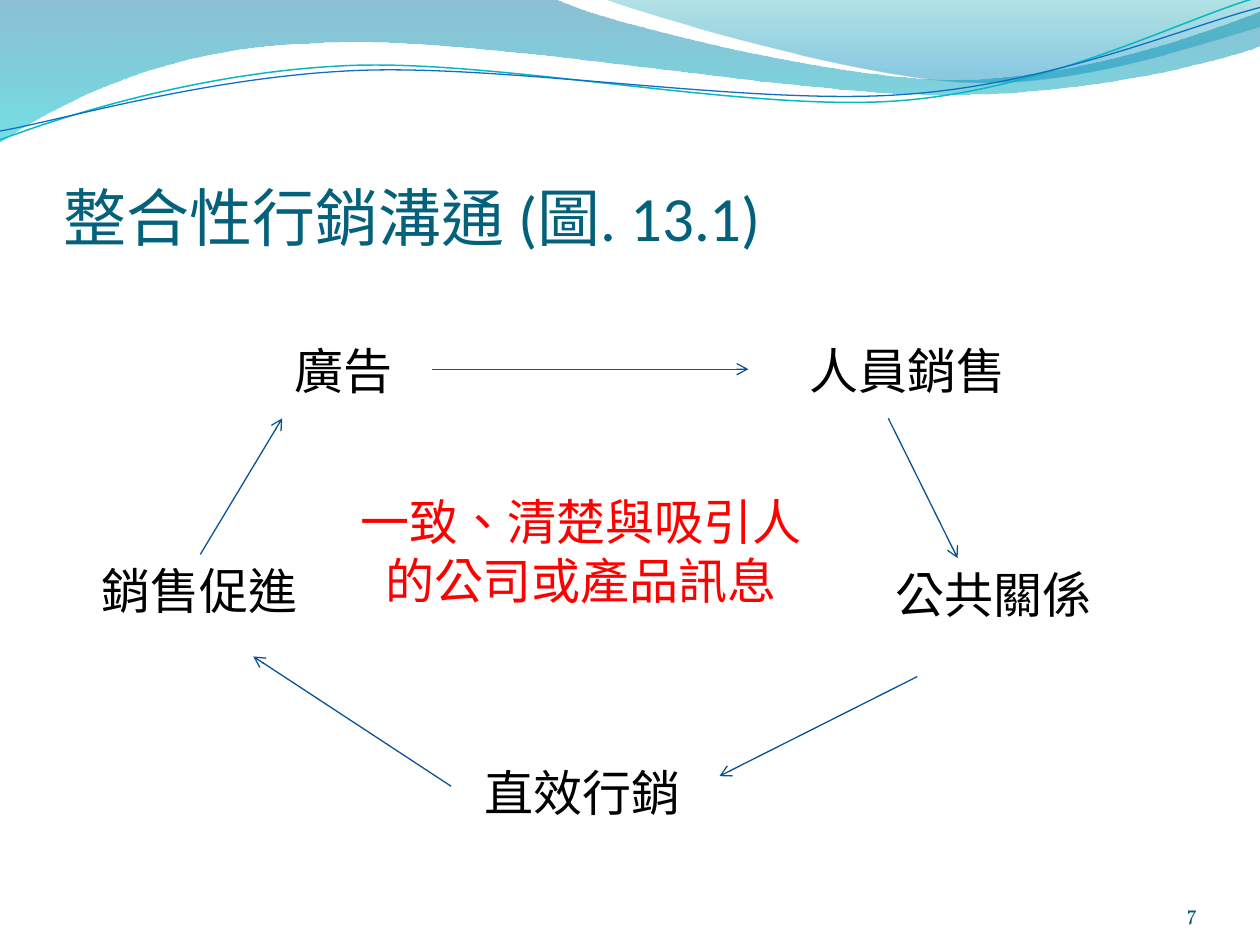
"""Build the integrated marketing communication cycle slide."""
import math
from dataclasses import dataclass
from typing import Optional

import pptx
import pptx.dml.color
import pptx.enum.lang
import pptx.enum.shapes
import pptx.enum.text
import pptx.oxml.ns
import pptx.util

Inches = pptx.util.Inches
Pt = pptx.util.Pt
Align = pptx.enum.text.PP_ALIGN
Anchor = pptx.enum.text.MSO_ANCHOR
Point = tuple[float, float]
ARROW_COLOR = "095295"
LINE_TILT = 2.7


@dataclass
class GradientStop:
    position: float
    color: str
    opacity: int


@dataclass
class Wave:
    start: Point
    segments: list[tuple[Point, ...]]
    gradient: tuple[GradientStop, ...] = ()
    line_color: str = ""
    line_width: float = 0
    center: Point = (0, 0)


@dataclass
class Label:
    text: str
    left: float
    top: float
    width: float
    height: float
    size: float = 28
    font: str = "Vollkorn"
    color: str = "000000"
    wrap: bool = False
    grow: bool = True
    align: Align = Align.LEFT
    anchor: Anchor = Anchor.TOP
    margins: Optional[tuple[float, float, float, float]] = None


@dataclass
class Arrow:
    start: Point
    end: Point


WAVES = [
    Wave((0, 0), [
        ((4.4, -0.01),),
        ((4.76, 0.17), (6.64, 0.63), (7.58, 0.63)),
        ((8.53, 0.63), (9.58, 0.26), (10, 0.09)),
        ((10.01, 0.36),),
        ((9.83, 0.44), (8.7, 0.76), (7.46, 0.75)),
        ((6.22, 0.75), (3.82, 0.28), (2.57, 0.34)),
        ((1.29, 0.36), (0.46, 0.83), (-0.01, 1.13)),
        ((0, 0),),
    ], gradient=(GradientStop(0, "0074A1", 45), GradientStop(1, "00C6CF", 55))),
    Wave((4.79, -0.01), [
        ((5.09, 0.11), (6.82, 0.62), (7.69, 0.65)),
        ((8.56, 0.69), (9.61, 0.32), (10, 0.21)),
        ((10, 0),),
        ((4.79, -0.01),),
    ], gradient=(GradientStop(0, "00A1A9", 30), GradientStop(0.8, "008BBF", 45))),
    Wave((0, 1.11), [
        ((0.48, 0.93), (1.58, 0.57), (2.77, 0.52)),
        ((3.95, 0.47), (5.93, 0.89), (7.13, 0.8)),
        ((8.33, 0.71), (9.38, 0.15), (9.98, -0.02)),
    ], line_color="0AB8BF", line_width=0.85, center=(4.99, 0.57)),
    Wave((0, 1.04), [
        ((0.47, 0.96), (1.64, 0.61), (2.83, 0.56)),
        ((4.03, 0.51), (5.97, 0.84), (7.17, 0.75)),
        ((8.36, 0.67), (9.41, 0.21), (10, 0.06)),
    ], line_color="0F6FC6", line_width=0.75, center=(5, 0.59)),
]

LABELS = [
    Label("7", 8.67, 6.95, 0.83, 0.4, size=12, color="045D75", wrap=True, grow=False,
          align=Align.RIGHT, anchor=Anchor.BOTTOM, margins=(0, 0, 0, 0)),
    Label("整合性行銷溝通 (圖. 13.1)", 0.5, 0.77, 9.08, 1.25, size=36, font="Calibri",
          color="04617B", wrap=True, grow=False, anchor=Anchor.BOTTOM,
          margins=(0, 0.05, 0, 0)),
    Label("人員銷售", 6.33, 2.65, 1.77, 0.57),
    Label("公共關係", 7.01, 4.43, 1.77, 0.57),
    Label("直效行銷", 3.75, 6, 1.77, 0.57),
    Label("銷售促進", 0.71, 4.4, 1.77, 0.57),
    Label("廣告", 2.24, 2.65, 0.99, 0.57),
    Label("一致、清楚與吸引人的公司或產品訊息", 2.72, 3.85, 3.78, 1.04, font="Arial",
          color="FF0000", wrap=True, align=Align.CENTER),
]

ARROWS = [
    Arrow((3.43, 2.93), (5.94, 2.93)),
    Arrow((7.05, 3.32), (7.6, 4.43)),
    Arrow((7.28, 5.37), (5.71, 6.16)),
    Arrow((3.58, 6.24), (2.01, 5.21)),
    Arrow((1.59, 4.4), (2.24, 3.32)),
]


def set_color(color_format, value: str) -> None:
    """Apply a hex colour to a colour format."""
    color_format.rgb = pptx.dml.color.RGBColor.from_string(value)


def add_child(parent, tag: str, **attributes: str) -> None:
    """Append a DrawingML element to a parent element."""
    parent.append(parent.makeelement(pptx.oxml.ns.qn(tag), attributes))


def turn(point: Point, center: Point, degrees: float) -> Point:
    """Turn a point clockwise about a center."""
    angle = math.radians(degrees)
    x, y = point[0] - center[0], point[1] - center[1]
    return (center[0] + x * math.cos(angle) - y * math.sin(angle),
            center[1] + x * math.sin(angle) + y * math.cos(angle))


def curve_segments(shape, segments: list[tuple[Point, ...]]) -> None:
    """Merge each three-point run of straight lines into one cubic curve."""
    lines = iter(shape.element.spPr.findall(".//" + pptx.oxml.ns.qn("a:lnTo")))
    for segment in segments:
        parts = [next(lines) for _ in segment]
        if len(parts) == 3:
            curve = parts[0].makeelement(pptx.oxml.ns.qn("a:cubicBezTo"), {})
            parts[0].addprevious(curve)
            for part in parts:
                curve.append(part[0])
                part.getparent().remove(part)


def add_wave(slide, wave: Wave) -> None:
    """Draw a gradient band or a tilted open curve."""
    tilt = 0 if wave.gradient else LINE_TILT
    points = [wave.start, *(point for segment in wave.segments for point in segment)]
    vertices = [tuple(map(Inches, turn(point, wave.center, tilt))) for point in points]
    builder = slide.shapes.build_freeform(*vertices[0])
    builder.add_line_segments(vertices[1:], close=bool(wave.gradient))
    shape = builder.convert_to_shape()
    curve_segments(shape, wave.segments)
    shape.rotation = -tilt
    shape.shadow.inherit = False
    if wave.gradient:
        shape.line.fill.background()
        shape.fill.gradient()
        shape.fill.gradient_angle = 270
        for stop, source in zip(shape.fill.gradient_stops, wave.gradient):
            stop.position = source.position
            set_color(stop.color, source.color)
        colors = shape.element.spPr.findall(".//" + pptx.oxml.ns.qn("a:srgbClr"))
        for color, source in zip(colors, wave.gradient):
            add_child(color, "a:alpha", val=str(source.opacity * 1000))
    else:
        shape.fill.background()
        set_color(shape.line.color, wave.line_color)
        shape.line.width = Pt(wave.line_width)


def add_label(slide, label: Label) -> None:
    """Add a text box holding one paragraph."""
    bounds = (label.left, label.top, label.width, label.height)
    frame = slide.shapes.add_textbox(*map(Inches, bounds)).text_frame
    frame.word_wrap = label.wrap
    frame.vertical_anchor = label.anchor
    if label.grow:
        frame.auto_size = pptx.enum.text.MSO_AUTO_SIZE.SHAPE_TO_FIT_TEXT
    if label.margins:
        (frame.margin_left, frame.margin_top,
         frame.margin_right, frame.margin_bottom) = map(Inches, label.margins)
    paragraph = frame.paragraphs[0]
    paragraph.text = label.text
    paragraph.alignment = label.align
    paragraph.font.size = Pt(label.size)
    paragraph.font.name = label.font
    set_color(paragraph.font.color, label.color)
    language = pptx.enum.lang.MSO_LANGUAGE_ID.TRADITIONAL_CHINESE
    paragraph.runs[0].font.language_id = language


def add_arrow(slide, arrow: Arrow) -> None:
    """Add a straight connector with an open arrowhead at its end."""
    connector = slide.shapes.add_connector(
        pptx.enum.shapes.MSO_CONNECTOR.STRAIGHT, *map(Inches, arrow.start + arrow.end))
    set_color(connector.line.color, ARROW_COLOR)
    connector.line.width = Pt(0.75)
    properties = connector.element.spPr
    add_child(properties.find(pptx.oxml.ns.qn("a:ln")), "a:tailEnd", type="arrow")
    add_child(properties, "a:effectLst")


def main() -> None:
    """Create and save the presentation."""
    presentation = pptx.Presentation()
    presentation.slide_width, presentation.slide_height = Inches(10), Inches(7.5)
    slide = presentation.slides.add_slide(presentation.slide_layouts[6])
    for items, draw in ((WAVES, add_wave), (LABELS, add_label), (ARROWS, add_arrow)):
        for item in items:
            draw(slide, item)
    presentation.save("out.pptx")


if __name__ == "__main__":
    main()
